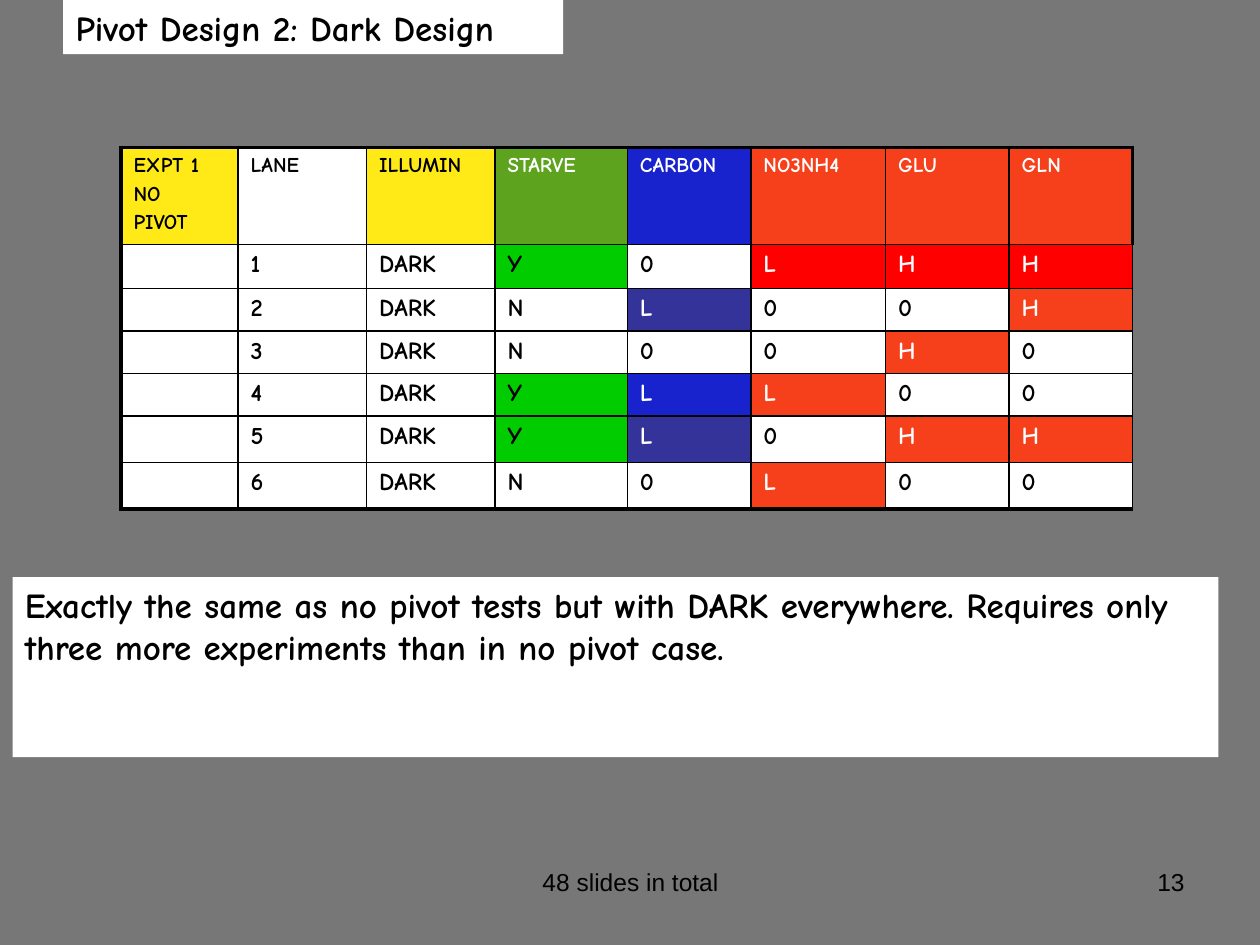
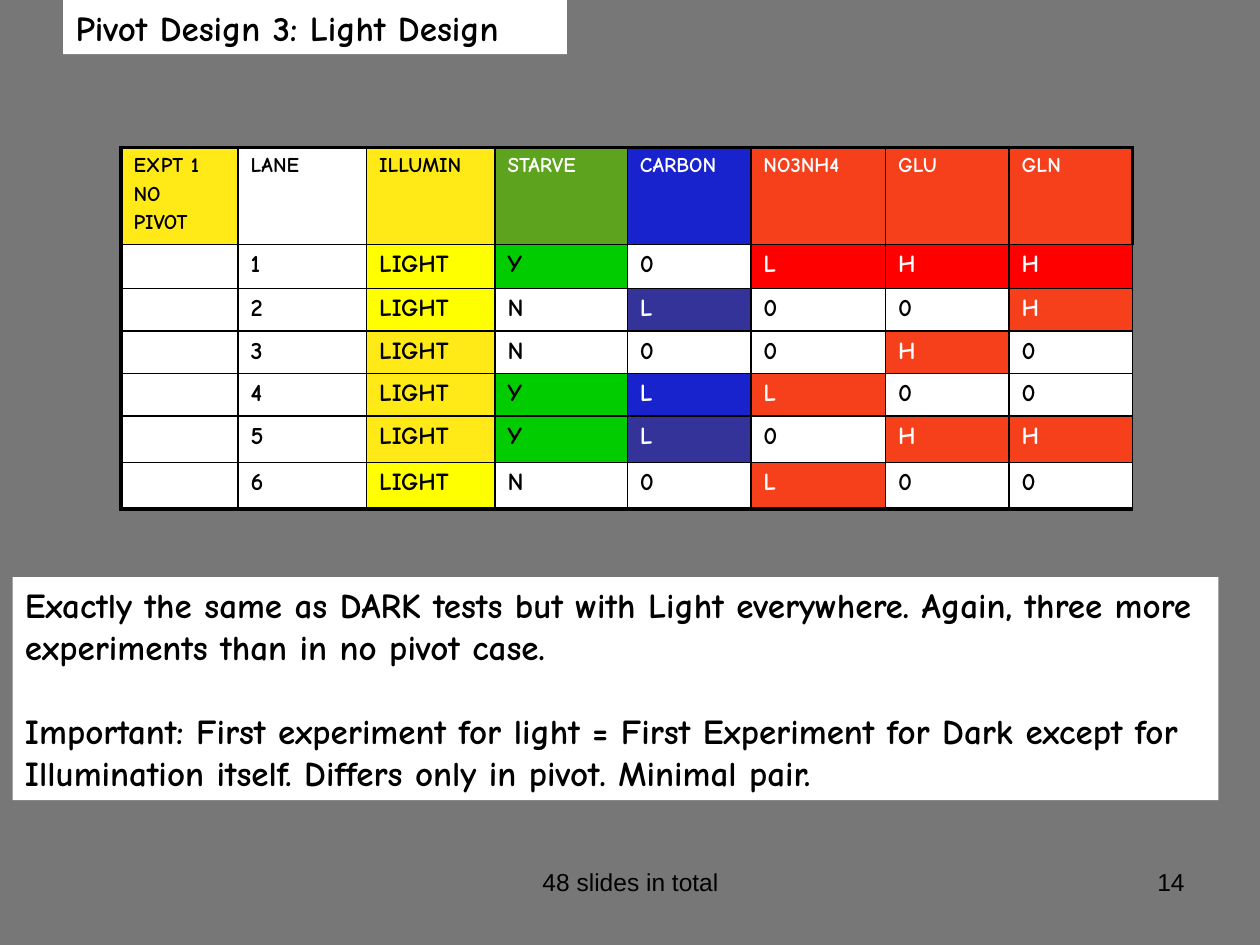
import pptx
import pptx.dml.color
import pptx.enum.shapes
import pptx.enum.text
import pptx.oxml
import pptx.oxml.ns
import pptx.util

Inches = pptx.util.Inches
Pt = pptx.util.Pt
ALIGN = pptx.enum.text.PP_ALIGN

COLOURS = {
    "backdrop": "777777", "white": "FFFFFF", "black": "000000",
    "gold": "FFEA18", "yellow": "FFFF00", "leaf": "5DA31E", "green": "00CC00",
    "blue": "1822CD", "navy": "333399", "orange": "F63F1B", "red": "FF0000",
}
WHITE_TEXT_FILLS = {"leaf", "blue", "navy", "orange", "red"}
HEADING_FONT = "Comic Neue"
FOOTER_FONT = "Arial"

# Each cell reads "text:fill"; the fill is white when left out.
HEADER = ["EXPT 1\nNO\nPIVOT:gold", "LANE", "ILLUMIN:gold", "STARVE:leaf",
          "CARBON:blue", "NO3NH4:orange", "GLU:orange", "GLN:orange"]
TREATMENTS = [
    "Y:green 0 L:red H:red H:red",
    "N L:navy 0 0 H:orange",
    "N 0 0 H:orange 0",
    "Y:green L:blue L:orange 0 0",
    "Y:green L:navy 0 H:orange H:orange",
    "N 0 L:orange 0 0",
]
COLUMN_WIDTHS = [0.93, 1.02, 1.02, 1.05, 0.98, 1.07, 0.98, 0.98]
ROW_HEIGHTS = [0.77, 0.35, 0.33, 0.33, 0.33, 0.37, 0.37]
THIN, THICK = 1, 2.25

DESIGNS = [
    {
        "number": 13,
        "title": "Pivot Design 2: Dark Design",
        "title_width": 3.97,
        "illumination": ["DARK"] * 6,
        "remarks": ["Exactly the same as no pivot tests but with DARK everywhere. "
                    "Requires only three more experiments than in no pivot case."],
        "remarks_height": 1.43,
    },
    {
        "number": 14,
        "title": "Pivot Design 3: Light Design",
        "title_width": 4,
        "illumination": [f"LIGHT:{fill}" for fill in
                         ("yellow", "yellow", "gold", "gold", "gold", "yellow")],
        "remarks": ["Exactly the same as DARK tests but with Light everywhere. "
                    "Again, three more experiments than in no pivot case.",
                    "Important: First experiment for light = First Experiment for Dark "
                    "except for Illumination itself. Differs only in pivot. Minimal pair."],
        "remarks_height": 1.77,
    },
]


def rgb(name):
    return pptx.dml.color.RGBColor.from_string(COLOURS[name])


def paint(part, name):
    part.fill.solid()
    part.fill.fore_color.rgb = rgb(name)


def write(frame, paragraphs, size=20, font=HEADING_FONT, colour="black",
          bold=True, align=ALIGN.LEFT, gap=0):
    """Fill a text frame; gap is the space in points before each paragraph."""
    frame.word_wrap = True
    frame.vertical_anchor = pptx.enum.text.MSO_ANCHOR.TOP
    for index, text in enumerate(paragraphs):
        paragraph = frame.paragraphs[0] if index == 0 else frame.add_paragraph()
        paragraph.alignment = align
        paragraph.space_before = Pt(gap)
        if not text:
            end = pptx.oxml.parse_xml(
                f'<a:endParaRPr {pptx.oxml.ns.nsdecls("a")} sz="{size * 100}"/>')
            paragraph._p.append(end)
            continue
        run = paragraph.add_run()
        run.text = text
        run.font.size = Pt(size)
        run.font.name = font
        run.font.bold = bold
        run.font.color.rgb = rgb(colour)


def set_borders(cell, widths):
    """Draw black borders; widths are points for left, right, top, bottom."""
    properties = cell._tc.get_or_add_tcPr()
    for index, (side, width) in enumerate(zip("LRTB", widths)):
        properties.insert(index, pptx.oxml.parse_xml(
            f'<a:ln{side} {pptx.oxml.ns.nsdecls("a")} w="{Pt(width)}"><a:solidFill>'
            f'<a:srgbClr val="{COLOURS["black"]}"/></a:solidFill></a:ln{side}>'))


def add_title(slide, text, left, top, width, height):
    title = slide.shapes.title
    title.left, title.top = Inches(left), Inches(top)
    title.width, title.height = Inches(width), Inches(height)
    paint(title, "white")
    title.text_frame.auto_size = pptx.enum.text.MSO_AUTO_SIZE.NONE
    write(title.text_frame, [text])


def add_lane_table(slide, illumination, left, top):
    lanes = [["", str(lane), light, *treatment.split()] for lane, (light, treatment)
             in enumerate(zip(illumination, TREATMENTS), start=1)]
    rows = [HEADER, *lanes]
    last_row, last_column = len(rows) - 1, len(HEADER) - 1
    table = slide.shapes.add_table(
        len(rows), len(HEADER), Inches(left), Inches(top),
        Inches(sum(COLUMN_WIDTHS)), Inches(sum(ROW_HEIGHTS))).table
    table.first_row = table.horz_banding = False
    for column, width in zip(table.columns, COLUMN_WIDTHS):
        column.width = Inches(width)
    for row, height in zip(table.rows, ROW_HEIGHTS):
        row.height = Inches(height)

    for r, entries in enumerate(rows):
        size = 12 if r == 0 else 14
        for c, entry in enumerate(entries):
            text, _, fill = entry.partition(":")
            fill = fill or "white"
            cell = table.cell(r, c)
            paint(cell, fill)
            write(cell.text_frame, text.split("\n"), size=size, gap=size * 0.2,
                  colour="white" if fill in WHITE_TEXT_FILLS else "black")
            set_borders(cell, (
                THICK if c == 0 else THIN,
                THICK if r == 0 and c == last_column else THIN,
                THICK if r == 0 else THIN,
                THICK if r == last_row else THIN))


def add_remarks(slide, remarks, left, top, width, height):
    panel = slide.shapes.add_shape(
        pptx.enum.shapes.MSO_SHAPE.RECTANGLE,
        Inches(left), Inches(top), Inches(width), Inches(height))
    panel.shadow.inherit = False
    panel.line.fill.background()
    paint(panel, "white")
    write(panel.text_frame, remarks, gap=24)


def add_footer(slide, text, align, left, width, top=6.83, height=0.52):
    footer = slide.shapes.add_textbox(
        Inches(left), Inches(top), Inches(width), Inches(height))
    write(footer.text_frame, [text], size=14, font=FOOTER_FONT, bold=False, align=align)


def add_design_slide(deck, design):
    slide = deck.slides.add_slide(deck.slide_layouts.get_by_name("Title Only"))
    add_title(slide, design["title"], 0.5, 0, design["title_width"], 0.43)
    add_lane_table(slide, design["illumination"], 0.96, 1.17)
    add_remarks(slide, design["remarks"], 0.1, 4.58, 9.57, design["remarks_height"])
    add_footer(slide, "48 slides in total", ALIGN.CENTER, 3.42, 3.17)
    add_footer(slide, str(design["number"]), ALIGN.RIGHT, 7.17, 2.33)


def main():
    deck = pptx.Presentation()
    deck.slide_width, deck.slide_height = Inches(10), Inches(7.5)
    paint(deck.slide_master.background, "backdrop")
    for design in DESIGNS:
        add_design_slide(deck, design)
    deck.save("out.pptx")


if __name__ == "__main__":
    main()
